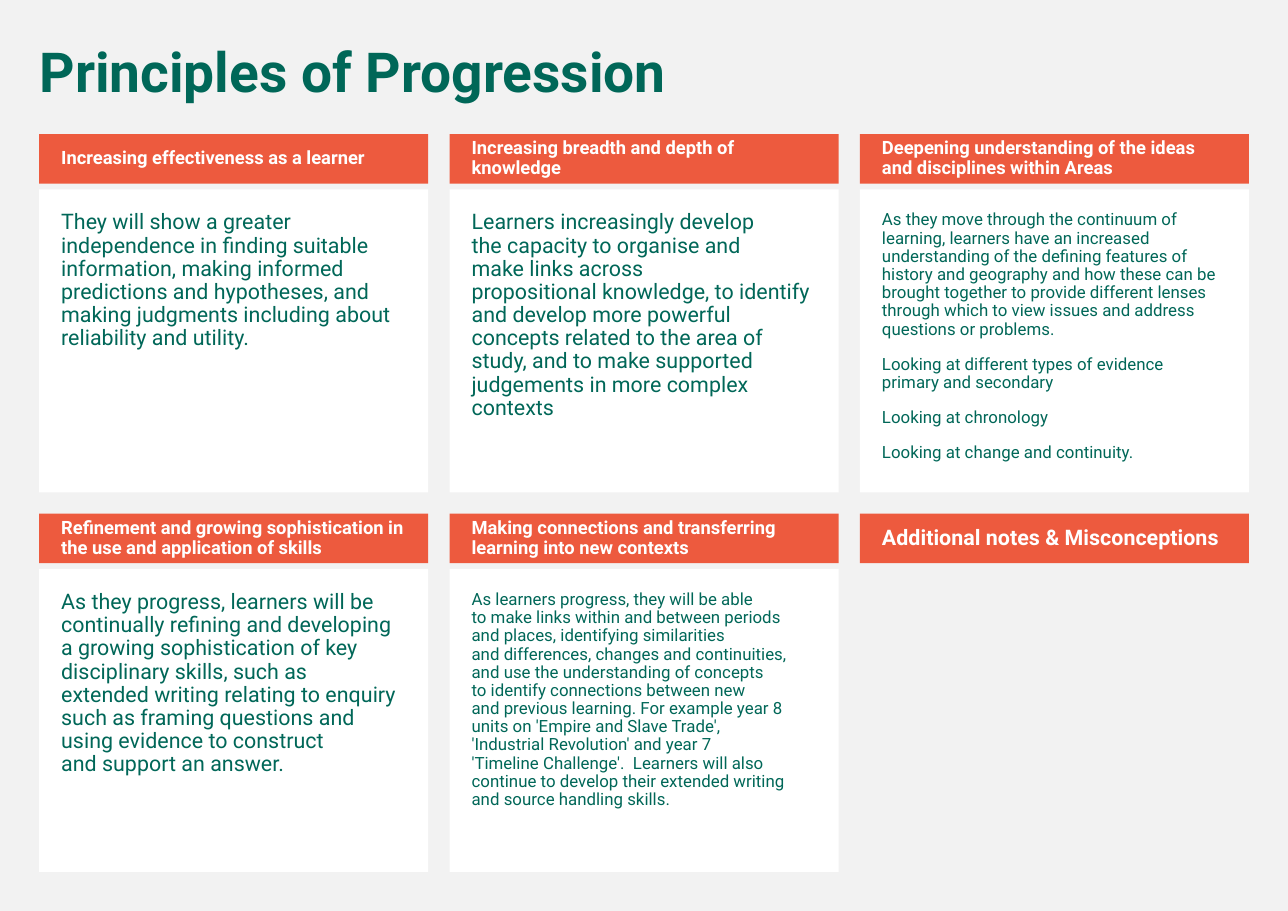
from pptx import Presentation
from pptx import util as u
from pptx.dml import color
from pptx.enum import shapes, text

FONT = "Roboto"
GREEN, ORANGE, WHITE, GREY = "006758", "ED5A3E", "FFFFFF", "F2F2F2"
NO_BREAK_SPACE = chr(160)

LEFT, TOP = 25.6, 87.6
COLUMN_STEP, ROW_STEP = 268.2, 248.1
CARD_WIDTH, HEADER_HEIGHT = 254.2, 32.4
BODY_OFFSET, BODY_HEIGHT = 36.2, 198
COLUMNS = 3

# Heading, heading size, body paragraphs, body size; ~ keeps two words together
CARDS = [
    ("Increasing effectiveness as a learner", 12, [
        "They will show a greater independence in finding~suitable information, "
        "making informed predictions~and hypotheses, and making judgments "
        "including~about reliability and utility.",
    ], 14),
    ("Increasing breadth and depth of knowledge", 12, [
        "Learners increasingly develop the~capacity to~organise~and make~links "
        "across propositional~knowledge, to identify and develop~more powerful "
        "concepts related to~the area of study, and to make~supported "
        "judgements in more~complex contexts",
    ], 14),
    ("Deepening understanding of the ideas and~disciplines within Areas", 12, [
        "As they move through the continuum of learning,~learners have an "
        "increased understanding of the~defining features of history and "
        "geography and~how these can be brought together to provide~different "
        "lenses through which to view issues and~address questions or~problems.",
        "Looking at different types of evidence primary~and~secondary",
        "Looking at~chronology",
        "Looking at change and continuity.",
    ], 11),
    ("Refinement and growing sophistication in the use and~application of skills", 12, [
        "As they progress, learners will be continually~refining and developing "
        "a growing sophistication~of key disciplinary skills, such as extended~"
        "writing relating to enquiry such as framing~questions and using "
        "evidence to construct and~support an answer.",
    ], 14),
    ("Making connections and transferring learning into~new contexts", 12, [
        "As learners progress, they will be able to~make links within and "
        "between periods and~places, identifying similarities and~differences, "
        "changes and continuities, and~use the understanding of concepts to~"
        "identify connections between new and~previous learning. "
        "For~example~year 8 units~on 'Empire and Slave Trade', "
        "'Industrial~Revolution' and year 7 'Timeline~Challenge'.~ Learners "
        "will also continue to~develop their extended writing and source~"
        "handling skills.",
    ], 11),
    ("Additional notes & Misconceptions", 14, [], 11),
]


def rgb(value):
    return color.RGBColor.from_string(value)


def write(shape, paragraphs, *, size, colour, bold=False,
          anchor=text.MSO_ANCHOR.TOP, insets=(7.2, 3.6, 7.2, 3.6)):
    """Fill a shape with paragraphs; insets are left, top, right, bottom."""
    frame = shape.text_frame
    frame.word_wrap = True
    frame.vertical_anchor = anchor
    (frame.margin_left, frame.margin_top,
     frame.margin_right, frame.margin_bottom) = map(u.Pt, insets)
    for index, content in enumerate(paragraphs):
        paragraph = frame.add_paragraph() if index else frame.paragraphs[0]
        paragraph.alignment = text.PP_ALIGN.LEFT
        paragraph.line_spacing = 0.9
        paragraph.space_before = u.Pt(11)
        run = paragraph.add_run()
        run.text = content.replace("~", NO_BREAK_SPACE)
        run.font.name = FONT
        run.font.size = u.Pt(size)
        run.font.bold = bold
        run.font.color.rgb = rgb(colour)


def add_panel(slide, left, top, height, fill):
    panel = slide.shapes.add_shape(
        shapes.MSO_SHAPE.RECTANGLE,
        u.Pt(left), u.Pt(top), u.Pt(CARD_WIDTH), u.Pt(height))
    panel.shadow.inherit = False
    panel.fill.solid()
    panel.fill.fore_color.rgb = rgb(fill)
    panel.line.fill.background()
    return panel


def add_card(slide, left, top, heading, heading_size, paragraphs, body_size):
    if paragraphs:
        body = add_panel(slide, left, top + BODY_OFFSET, BODY_HEIGHT, WHITE)
        write(body, paragraphs, size=body_size, colour=GREEN, insets=[14.4] * 4)
    header = add_panel(slide, left, top, HEADER_HEIGHT, ORANGE)
    write(header, [heading], size=heading_size, colour=WHITE, bold=True,
          anchor=text.MSO_ANCHOR.MIDDLE, insets=(14.4, 3.6, 7.2, 3.6))


def add_title(slide, title):
    box = slide.shapes.add_textbox(u.Pt(18.7), u.Pt(25.9), u.Pt(797.8), u.Pt(46.8))
    write(box, [title], size=36, colour=GREEN, bold=True)


def main():
    presentation = Presentation()
    presentation.slide_width = u.Pt(841.68)
    presentation.slide_height = u.Pt(595.44)
    slide = presentation.slides.add_slide(presentation.slide_layouts[6])
    slide.background.fill.solid()
    slide.background.fill.fore_color.rgb = rgb(GREY)

    add_title(slide, "Principles of Progression")
    for index, card in enumerate(CARDS):
        row, column = divmod(index, COLUMNS)
        add_card(slide, LEFT + column * COLUMN_STEP, TOP + row * ROW_STEP, *card)
    presentation.save("out.pptx")


if __name__ == "__main__":
    main()
